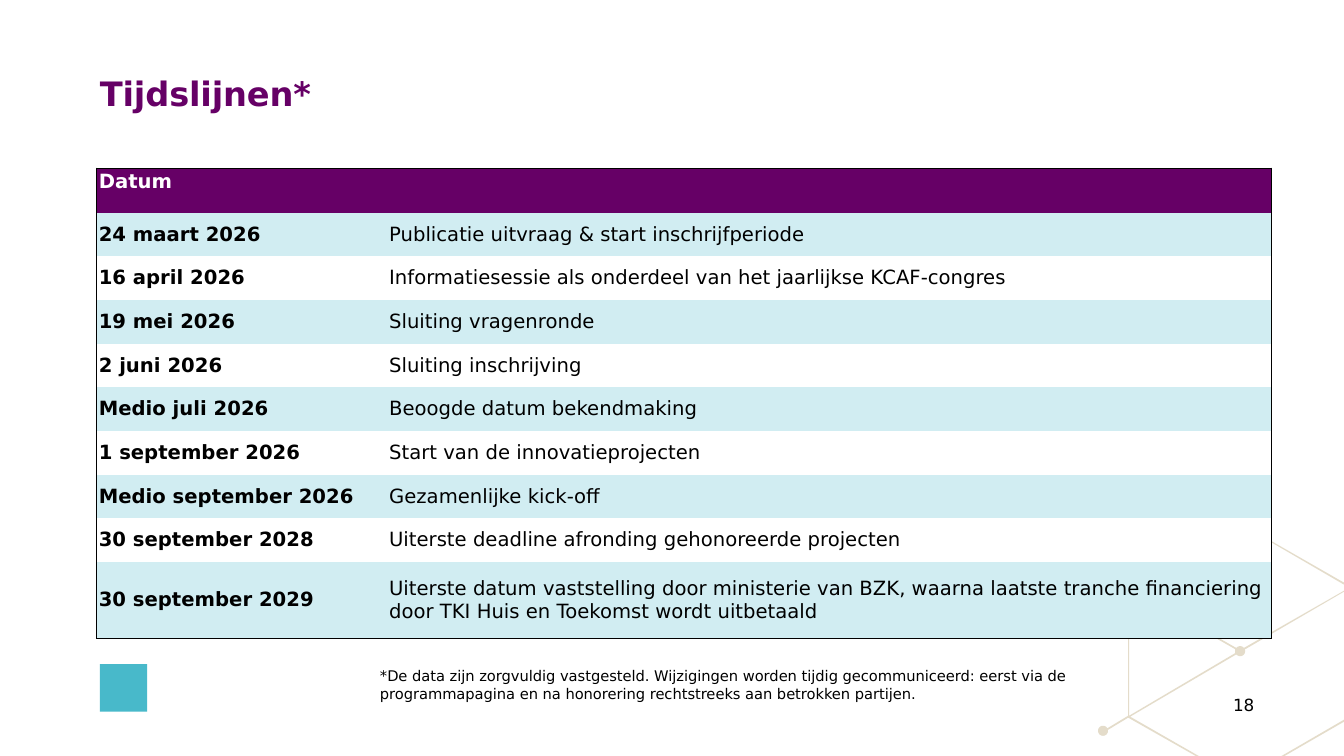
"""Build the timeline slide with its table, footnote and line pattern."""
from dataclasses import dataclass
from math import cos, radians, sin
from typing import Any

from pptx import Presentation
from pptx.dml.color import RGBColor
from pptx.enum.shapes import MSO_SHAPE as Form
from pptx.enum.text import MSO_ANCHOR as Anchor
from pptx.oxml import parse_xml
from pptx.oxml.ns import nsdecls
from pptx.util import Inches, Pt

PLUM = RGBColor(0x66, 0x00, 0x66)
AQUA = RGBColor(0xD1, 0xED, 0xF2)
TEAL = RGBColor(0x48, 0xB9, 0xCA)
SAND = RGBColor(0xE4, 0xDC, 0xCA)
WHITE = RGBColor(0xFF, 0xFF, 0xFF)
BLACK = RGBColor(0x00, 0x00, 0x00)
FONT = "DejaVu Sans"
Point = tuple[float, float]


@dataclass
class Note:
    """A text box with its place and format."""
    text: str
    area: tuple[float, float, float, float]
    style: dict[str, Any]
    inset: bool = False
    space: int = 0


@dataclass
class Event:
    """A date and what happens then."""
    date: str
    label: str


def arc(hub: Point, start: int, end: int) -> list[Point]:
    """Give points on a dot's rim between two angles."""
    return [(hub[0] + 0.05 * cos(radians(turn)),
             hub[1] + 0.05 * sin(radians(turn)))
            for turn in range(start, end + 1, 20)]


NOTES = [
    Note("Tijdslijnen*", (0.99, 0.72, 11.22, 0.94),
         {"size": Pt(24), "bold": True, "color": PLUM}, space=-10),
    Note("18", (12.23, 6.89, 0.43, 0.28), {"size": Pt(12), "color": BLACK}),
    Note("*De data zijn zorgvuldig vastgesteld. Wijzigingen worden tijdig "
         "gecommuniceerd: eerst via de programmapagina en na honorering "
         "rechtstreeks aan betrokken partijen.", (3.67, 6.57, 8.01, 0.45),
         {"size": Pt(10.5), "color": BLACK}, inset=True),
]
EVENTS = [
    Event("Datum", ""),
    Event("24 maart 2026", "Publicatie uitvraag & start inschrijfperiode"),
    Event("16 april 2026",
          "Informatiesessie als onderdeel van het jaarlijkse KCAF-congres"),
    Event("19 mei 2026", "Sluiting vragenronde"),
    Event("2 juni 2026", "Sluiting inschrijving"),
    Event("Medio juli 2026", "Beoogde datum bekendmaking"),
    Event("1 september 2026", "Start van de innovatieprojecten"),
    Event("Medio september 2026", "Gezamenlijke kick-off"),
    Event("30 september 2028",
          "Uiterste deadline afronding gehonoreerde projecten"),
    Event("30 september 2029",
          "Uiterste datum vaststelling door ministerie van BZK, waarna laatste "
          "tranche financiering door TKI Huis en Toekomst wordt uitbetaald"),
]
NODE, DOT = (12.3, 6.46), (10.94, 7.25)
WEB: list[list[Point]] = [
    [(12.71, 7.5), (13.33, 7.14), (13.33, 7.16), (12.74, 7.5)],
    [(12.3, 5.2), (11.21, 5.83), *arc(NODE, 220, 320),
     (13.33, 5.86), (13.33, 5.87), *arc(NODE, 340, 500),
     (11.21, 7.11), (11.89, 7.5), (11.86, 7.5), (11.19, 7.12),
     *arc(DOT, -10, 330), (11.19, 7.1), (11.19, 5.83),
     (12.3, 5.19), (13.33, 5.78), (13.33, 5.8)],
    [(11.2, 5.84), (11.2, 7.1), (12.25, 6.48), (12.25, 6.44)],
]


def format_font(font: Any, style: dict[str, Any]) -> None:
    """Apply format values to a font."""
    for key, value in {"name": FONT, **style}.items():
        if key == "color":
            font.color.rgb = value
        else:
            setattr(font, key, value)


def add_note(slide: Any, note: Note) -> None:
    """Add a wrapped text box."""
    frame = slide.shapes.add_textbox(*map(Inches, note.area)).text_frame
    frame.word_wrap = True
    if not note.inset:
        for side in ("left", "top", "right", "bottom"):
            setattr(frame, f"margin_{side}", 0)
    run = frame.paragraphs[0].add_run()
    run.text = note.text
    format_font(run.font, note.style)
    if note.space:
        run._r.get_or_add_rPr().set("spc", str(note.space))


def paint(shape: Any, color: RGBColor) -> None:
    """Give a shape a plain fill."""
    shape.shadow.inherit = False
    shape.fill.solid()
    shape.fill.fore_color.rgb = color
    shape.line.fill.background()


def add_web(slide: Any, loops: list[list[Point]]) -> None:
    """Add the line pattern as one outline."""
    rings = [[(Inches(x), Inches(y)) for x, y in loop] for loop in loops]
    pen = slide.shapes.build_freeform(*rings[0][0])
    for ring in rings:
        if ring is not rings[0]:
            pen.move_to(*ring[0])
        pen.add_line_segments(ring[1:], close=True)
    paint(pen.convert_to_shape(), SAND)


def set_edges(cell: Any, sides: dict[str, bool]) -> None:
    """Draw the chosen sides of a cell in black and clear the others."""
    props = cell._tc.get_or_add_tcPr()
    for index, (side, shown) in enumerate(sides.items()):
        ink = (f'<a:solidFill><a:srgbClr val="{BLACK}"/></a:solidFill>'
               if shown else "<a:noFill/>")
        props.insert(index, parse_xml(
            f'<a:ln{side} {nsdecls("a")} w="{Pt(1)}">{ink}</a:ln{side}>'))


def add_table(slide: Any, events: list[Event]) -> None:
    """Add the table of dates."""
    last = len(events) - 1
    table = slide.shapes.add_table(
        len(events), 2, *map(Inches, (0.96, 1.67, 11.65, 4.67))).table
    for col, width in zip(table.columns, (2.88, 8.77)):
        col.width = Inches(width)
    tall = {0: Inches(0.44), last: Inches(0.76)}
    for row, event in enumerate(events):
        table.rows[row].height = tall.get(row, Inches(3.9) // last)
        fill = AQUA if row % 2 else WHITE
        for col, text in enumerate((event.date, event.label)):
            cell = table.cell(row, col)
            for side in ("left", "top", "right", "bottom"):
                setattr(cell, f"margin_{side}", Inches(0.02))
            cell.vertical_anchor = Anchor.MIDDLE if row else Anchor.TOP
            cell.fill.solid()
            cell.fill.fore_color.rgb = fill if row else PLUM
            set_edges(cell, {"L": col == 0, "R": col == 1,
                             "T": row == 0, "B": row == last})
            cell.text = text
            format_font(cell.text_frame.paragraphs[0].font, {
                "size": Pt(14), "bold": col == 0,
                "color": BLACK if row else WHITE})


def main() -> None:
    """Build and save the slide."""
    deck = Presentation()
    deck.slide_width, deck.slide_height = Inches(13.33), Inches(7.5)
    slide = deck.slides.add_slide(deck.slide_layouts[6])
    add_web(slide, WEB)
    badge = slide.shapes.add_shape(
        Form.RECTANGLE, *map(Inches, (0.99, 6.59, 0.47, 0.47)))
    paint(badge, TEAL)
    add_table(slide, EVENTS)
    for note in NOTES:
        add_note(slide, note)
    deck.save("out.pptx")


if __name__ == "__main__":
    main()
